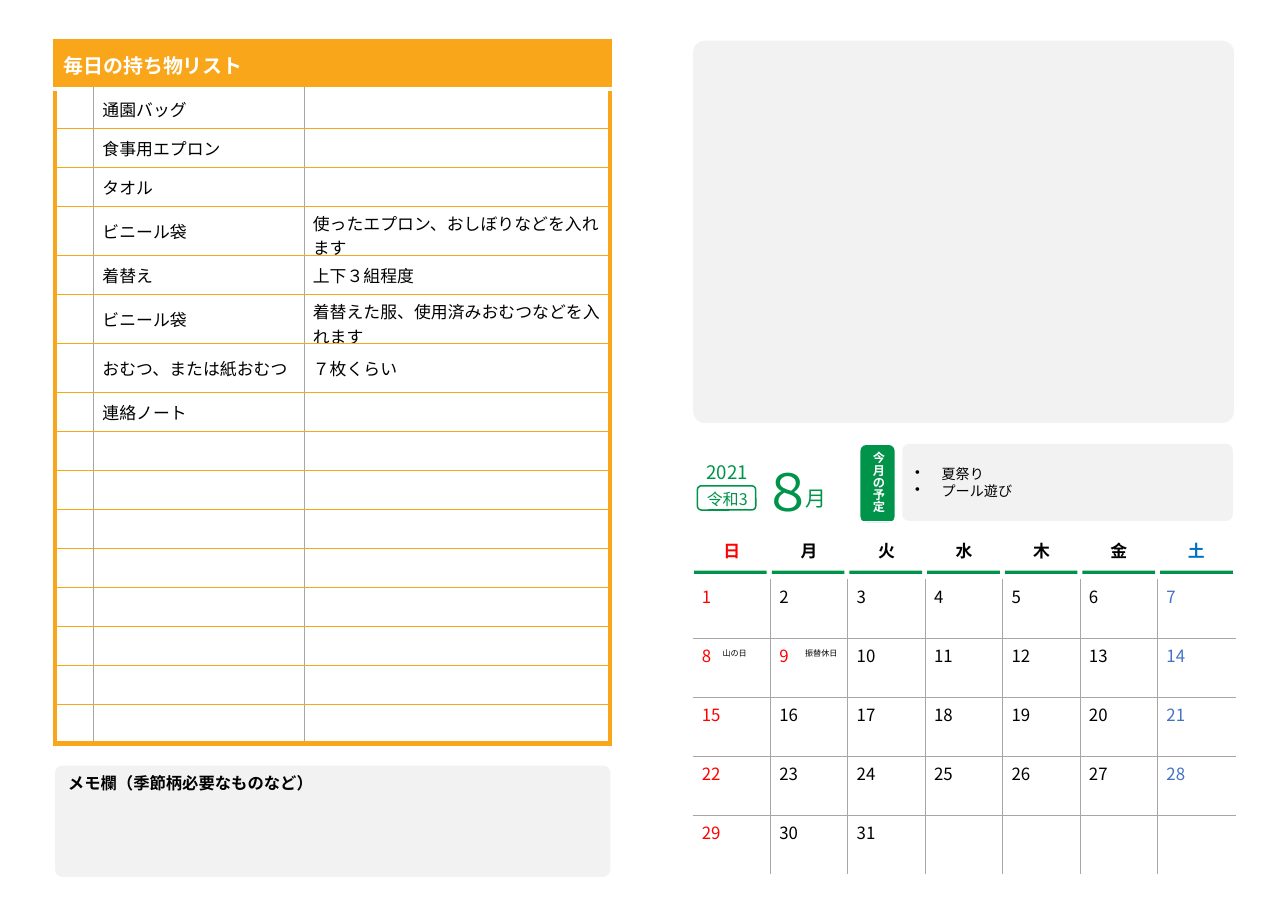
from lxml import etree
from pptx import Presentation
from pptx.dml.color import RGBColor
from pptx.enum import shapes, text
from pptx.oxml import ns
from pptx.util import Inches, Pt

# Content
LIST_TITLE = "毎日の持ち物リスト"
BELONGINGS = [
    ("通園バッグ", ""),
    ("食事用エプロン", ""),
    ("タオル", ""),
    ("ビニール袋", "使ったエプロン、おしぼりなどを入れます"),
    ("着替え", "上下３組程度"),
    ("ビニール袋", "着替えた服、使用済みおむつなどを入れます"),
    ("おむつ、または紙おむつ", "７枚くらい"),
    ("連絡ノート", ""),
]
LIST_ROWS = 16
TALL_ROWS = (0, 4, 6, 7)
MEMO = "メモ欄（季節柄必要なものなど）"
YEAR, ERA, MONTH, MONTH_UNIT = "2021", "令和3", "８", "月"
PLANS_TITLE = "今月の予定"
PLANS = ["夏祭り", "プール遊び"]
WEEKDAYS = "日月火水木金土"
DAYS_IN_MONTH, WEEKS = 31, 5
HOLIDAYS = {8: ("山の日", 6.46, 0.43), 9: ("振替休日", 7.21, 0.5)}

# Theme
THEME = {
    "font": "Noto Sans CJK JP",
    "green": "00944A", "orange": "FAA61A", "panel": "F2F2F2", "grid": "A6A6A6",
    "ink": "000000", "white": "FFFFFF", "sunday": "FF0000",
    "saturday": "4472C4", "saturday_head": "0070C0",
    "title": 13, "body": 11, "memo": 10.7, "plan": 9.2, "tab": 8,
    "holiday": 5.3, "month": 33.6, "unit": 13.7, "year": 12.2, "era": 10.5,
}

# Layout
LEFT_X, LEFT_W, TOP = 0.5, 5.04, 0.37
LIST_COLS, LIST_H, TALL = (0.35, 1.91, 2.78), 6.37, 0.44
SHORT = (LIST_H - TALL * len(TALL_ROWS)) / (LIST_ROWS + 1 - len(TALL_ROWS))
RIGHT_X, CAL_TOP, CAL_W, CAL_H = 6.29, 4.73, 4.92, 3.21
CAL_COL, CAL_ROW = CAL_W / len(WEEKDAYS), CAL_H / (WEEKS + 1)

prs = Presentation()
prs.slide_width, prs.slide_height = Inches(11.69), Inches(8.27)
slide = prs.slides.add_slide(prs.slide_layouts[6])


def rgb(name):
    return RGBColor.from_string(THEME[name])


def style(target, size, color="ink", bold=False):
    """Set the font of a paragraph or a run."""
    font = target.font
    font.size, font.bold = Pt(THEME[size]), bold
    font.color.rgb = rgb(color)
    font.name = THEME["font"]
    etree.SubElement(font._element, ns.qn("a:ea"), typeface=THEME["font"])


def label(parent, box, words, size, color="ink", wrap=True, align=None):
    area = parent.shapes.add_textbox(*map(Inches, box)).text_frame
    area.word_wrap = wrap
    area.auto_size = text.MSO_AUTO_SIZE.SHAPE_TO_FIT_TEXT
    area.text = words
    style(area.paragraphs[0], size, color)
    area.paragraphs[0].alignment = align


def panel(parent, box, fill=None, line=None, corner=None,
          kind=shapes.MSO_SHAPE.ROUNDED_RECTANGLE):
    plate = parent.shapes.add_shape(kind, *map(Inches, box))
    plate.shadow.inherit = False
    if corner:
        plate.adjustments[0] = corner
    if fill:
        plate.fill.solid()
        plate.fill.fore_color.rgb = rgb(fill)
    else:
        plate.fill.background()
    if line:
        plate.line.color.rgb, plate.line.width = rgb(line), Pt(1)
    else:
        plate.line.fill.background()
    return plate.text_frame


def grid(box, widths, heights):
    table = slide.shapes.add_table(len(heights), len(widths), *map(Inches, box)).table
    table.first_row = table.horz_banding = False
    for column, width in zip(table.columns, widths):
        column.width = Inches(width)
    for row, height in zip(table.rows, heights):
        row.height = Inches(height)
    return table


def fill_cell(cell, words, size, color, bold, align, anchor, fill, edges):
    cell.margin_left = cell.margin_right = Inches(0.08)
    cell.margin_top = cell.margin_bottom = Inches(0.04)
    cell.vertical_anchor = anchor
    paragraph = cell.text_frame.paragraphs[0]
    paragraph.alignment = align
    if words:
        entry = paragraph.add_run()
        entry.text = words
        style(entry, size, color, bold)
    else:
        etree.SubElement(paragraph._p, ns.qn("a:endParaRPr"), sz=str(THEME[size] * 100))
    props = cell._tc.get_or_add_tcPr()
    for side, (edge_color, width) in zip("LRTB", edges):
        edge = etree.SubElement(props, ns.qn(f"a:ln{side}"), w=str(Pt(width)))
        solid = etree.SubElement(edge, ns.qn("a:solidFill"))
        etree.SubElement(solid, ns.qn("a:srgbClr"), val=THEME[edge_color])
    if fill:
        cell.fill.solid()
        cell.fill.fore_color.rgb = rgb(fill)
    else:
        cell.fill.background()


# Month heading
month_group = slide.shapes.add_group_shape()
label(month_group, (6.82, 4.13, 0.53, 0.67), MONTH, "month", "green")
label(month_group, (7.21, 4.36, 0.39, 0.33), MONTH_UNIT, "unit", "green", wrap=False)

# Free area and plans of the month
panel(slide, (RIGHT_X, TOP, 4.91, 3.47), "panel", corner=0.031)
plans = panel(slide, (8.19, 4.03, 3, 0.7), "panel", corner=0.087)
plans.text = "\n".join(PLANS)
plans.vertical_anchor = text.MSO_ANCHOR.MIDDLE
for plan in plans.paragraphs:
    props = plan._p.get_or_add_pPr()
    props.set("marL", str(Inches(0.24)))
    props.set("indent", str(-Inches(0.24)))
    etree.SubElement(props, ns.qn("a:buChar"), char="•")
    style(plan, "plan")
    plan.alignment = text.PP_ALIGN.LEFT

plans_tab = panel(slide, (7.81, 4.04, 0.31, 0.7), "green")
plans_tab.text = PLANS_TITLE
plans_tab.word_wrap = True
plans_tab.vertical_anchor = text.MSO_ANCHOR.MIDDLE
plans_tab.paragraphs[0].line_spacing = Pt(8)
plans_tab.paragraphs[0].alignment = text.PP_ALIGN.CENTER
style(plans_tab.paragraphs[0], "tab", "white", True)

# Weekday underlines
for day in range(len(WEEKDAYS)):
    panel(slide, (6.3 + day * 0.705, 5.18, 0.66, 0.03), "green",
          kind=shapes.MSO_SHAPE.RECTANGLE)

# Calendar: the first of the month is a Sunday
calendar = grid((RIGHT_X, CAL_TOP, CAL_W, CAL_H),
                [CAL_COL] * len(WEEKDAYS), [CAL_ROW] * (WEEKS + 1))
for week in range(WEEKS + 1):
    for col, weekday in enumerate(WEEKDAYS):
        head = week == 0
        date = (week - 1) * len(WEEKDAYS) + col + 1
        words = weekday if head else str(date) if date <= DAYS_IN_MONTH else ""
        if col == 0 or (not head and date in HOLIDAYS):
            color = "sunday"
        elif col == 6:
            color = "saturday_head" if head else "saturday"
        else:
            color = "ink"
        outer = (head or col == 0, head or col == 6, week <= 1, head or week == WEEKS)
        edges = [("white" if edge else "grid", 0.75) for edge in outer]
        fill_cell(calendar.cell(week, col), words, "body", color, head,
                  text.PP_ALIGN.CENTER if head else None,
                  text.MSO_ANCHOR.MIDDLE if head else text.MSO_ANCHOR.TOP, None, edges)
for name, left, width in HOLIDAYS.values():
    label(slide, (left, 5.84, width, 0.19), name, "holiday", wrap=False)

# List of belongings
heights = [TALL if row in TALL_ROWS else SHORT for row in range(LIST_ROWS + 1)]
belongings = grid((LEFT_X, TOP, LEFT_W, LIST_H), LIST_COLS, heights)
belongings.cell(0, 0).merge(belongings.cell(0, 2))
blank_rows = [("", "")] * (LIST_ROWS - len(BELONGINGS))
list_rows = [(LIST_TITLE, "", "")] + [("", *item) for item in BELONGINGS + blank_rows]
thick, thin, gap, inner = ("orange", 3), ("orange", 1), ("white", 3), ("grid", 0.75)
for row, entries in enumerate(list_rows):
    head = row == 0
    for col, words in enumerate(entries):
        edges = (thick if head or col == 0 else inner,
                 thick if head or col == 2 else inner,
                 thick if head else gap if row == 1 else thin,
                 gap if head else thick if row == LIST_ROWS else thin)
        fill_cell(belongings.cell(row, col), words, "title" if head else "body",
                  "white" if head else "ink", head, None, text.MSO_ANCHOR.MIDDLE,
                  "orange" if head else None, edges)

# Memo
memo = panel(slide, (LEFT_X, 6.95, LEFT_W, 1.01), "panel", corner=0.064)
memo.text = MEMO
memo.vertical_anchor = text.MSO_ANCHOR.TOP
memo.paragraphs[0].alignment = text.PP_ALIGN.LEFT
style(memo.paragraphs[0], "memo", bold=True)

# Year and era
year_group = slide.shapes.add_group_shape()
label(year_group, (RIGHT_X, 4.39, 0.62, 0.28), ERA, "era", "green", align=text.PP_ALIGN.CENTER)
label(year_group, (RIGHT_X, 4.13, 0.62, 0.31), YEAR, "year", "green", align=text.PP_ALIGN.CENTER)
panel(year_group, (6.33, 4.41, 0.53, 0.22), line="green")

prs.save("out.pptx")
